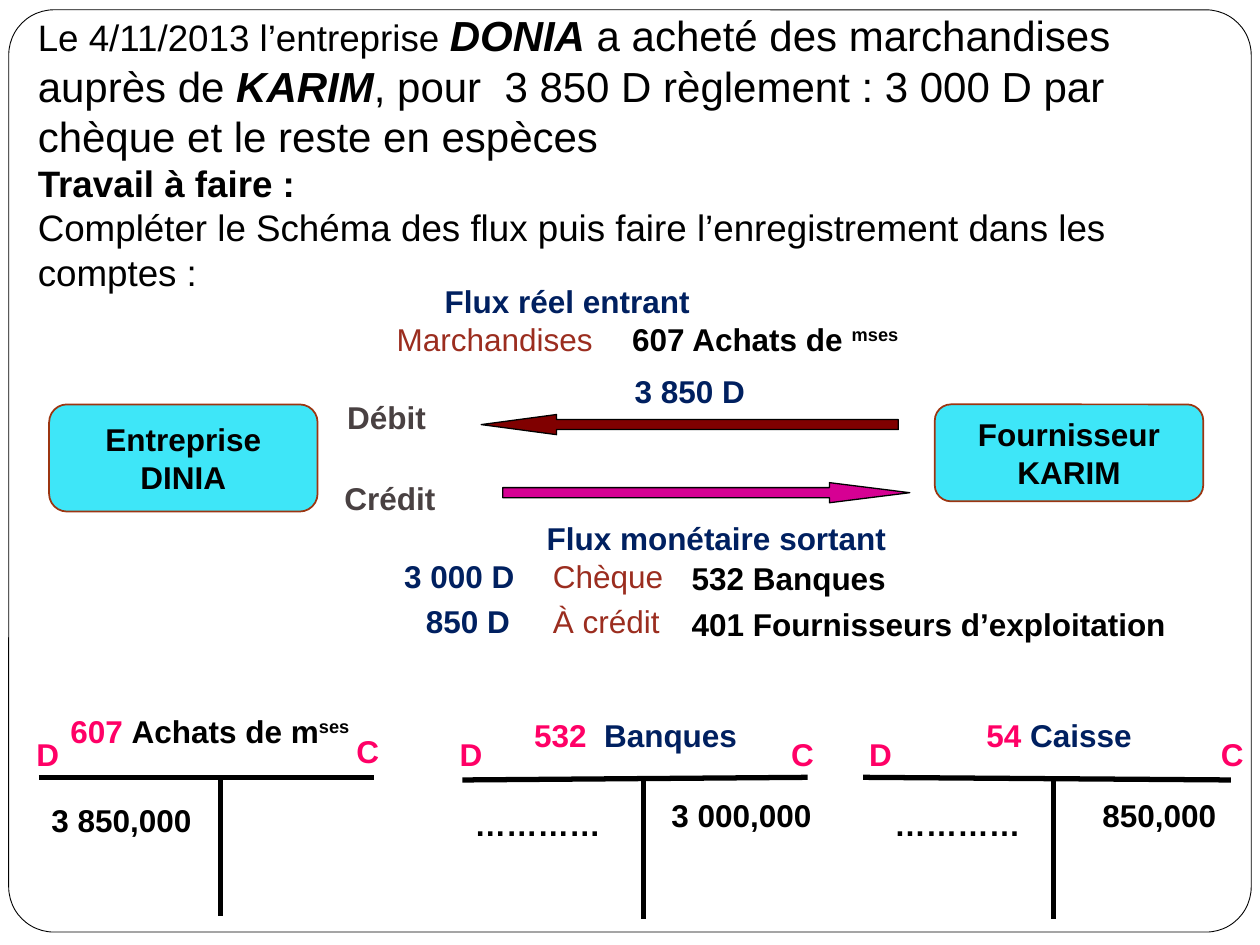
from lxml.etree import SubElement
from pptx import Presentation
from pptx.dml.color import RGBColor
from pptx.enum.shapes import MSO_CONNECTOR, MSO_SHAPE
from pptx.enum.text import MSO_ANCHOR, PP_ALIGN
from pptx.oxml.ns import qn
from pptx.util import Pt

BLACK = RGBColor(0x00, 0x00, 0x00)
WHITE = RGBColor(0xFF, 0xFF, 0xFF)
NAVY = RGBColor(0x00, 0x20, 0x60)
RUST = RGBColor(0x9B, 0x2D, 0x1F)
GREY = RGBColor(0x49, 0x41, 0x42)
PINK = RGBColor(0xFF, 0x00, 0x66)
CYAN = RGBColor(0x3E, 0xE6, 0xF8)
BROWN = RGBColor(0x9C, 0x35, 0x11)
MAGENTA = RGBColor(0xD6, 0x00, 0x93)
MAROON = RGBColor(0x80, 0x00, 0x00)


def add_run(paragraph, text, size=18, color=BLACK, bold=True, italic=False, superscript=False):
    run = paragraph.add_run()
    run.text = text
    font = run.font
    font.name = "Arial"
    font.size = Pt(size)
    font.bold = bold
    font.italic = italic
    font.color.rgb = color
    if superscript:
        run._r.get_or_add_rPr().set("baseline", "30000")


class SlideBuilder:
    row_height = 28.8
    account_line = 3

    def __init__(self, slide):
        self.slide = slide

    def shape(self, kind, left, top, width, height, fill, line, line_width, adjustments=()):
        shape = self.slide.shapes.add_shape(kind, Pt(left), Pt(top), Pt(width), Pt(height))
        shape.shadow.inherit = False
        shape.fill.solid()
        shape.fill.fore_color.rgb = fill
        shape.line.color.rgb = line
        shape.line.width = Pt(line_width)
        for index, value in enumerate(adjustments):
            shape.adjustments[index] = value
        return shape

    def party(self, text, left, top, width, height):
        shape = self.shape(MSO_SHAPE.ROUNDED_RECTANGLE, left, top, width, height, CYAN, BROWN, 1)
        frame = shape.text_frame
        frame.word_wrap = True
        frame.vertical_anchor = MSO_ANCHOR.MIDDLE
        paragraph = frame.paragraphs[0]
        paragraph.alignment = PP_ALIGN.CENTER
        add_run(paragraph, text)

    def text(self, paragraphs, left, top, width, height=row_height,
             align=PP_ALIGN.LEFT, anchor=MSO_ANCHOR.TOP, inset=7.2):
        box = self.slide.shapes.add_textbox(Pt(left), Pt(top), Pt(width), Pt(height))
        frame = box.text_frame
        frame.word_wrap = True
        frame.vertical_anchor = anchor
        frame.margin_left = Pt(inset)
        for index, runs in enumerate(paragraphs):
            paragraph = frame.add_paragraph() if index else frame.paragraphs[0]
            paragraph.alignment = align
            for text, style in runs:
                add_run(paragraph, text, **style)

    def label(self, text, left, top, width, align=PP_ALIGN.LEFT, **style):
        self.text([[(text, style)]], left, top, width, align=align)

    def line(self, start, end):
        connector = self.slide.shapes.add_connector(
            MSO_CONNECTOR.STRAIGHT, *(Pt(value) for value in (*start, *end)))
        connector.line.color.rgb = BLACK
        connector.line.width = Pt(self.account_line)
        SubElement(connector._element.spPr, qn("a:effectLst"))

    def account(self, title, title_at, bar, stem, debit_mark, credit_mark, amounts):
        self.line(*bar)
        self.line(*stem)
        self.text([title], *title_at)
        self.label("D", *debit_mark, 31.7, color=PINK)
        self.label("C", *credit_mark, 27.4, color=PINK)
        for amount, left, top in amounts:
            self.label(amount, left, top, 105)


def main():
    presentation = Presentation()
    presentation.slide_width = Pt(720)
    presentation.slide_height = Pt(540)
    builder = SlideBuilder(presentation.slides.add_slide(presentation.slide_layouts[6]))

    builder.shape(MSO_SHAPE.ROUNDED_RECTANGLE, 5, 5.6, 710, 527, WHITE, BLACK, 0.5, [0.049])

    plain = {"size": 24, "bold": False}
    name = {"size": 24, "italic": True}
    builder.text([
        [("Le 4/11/2013 l’entreprise ", {"size": 21, "bold": False}),
         ("DONIA", name),
         (" a acheté des marchandises auprès de ", plain),
         ("KARIM", name),
         (", pour  3 850 D règlement : 3 000 D par chèque et le reste en espèces", plain)],
        [("Travail à faire :", {"size": 21})],
        [("Compléter le Schéma des flux puis faire l’enregistrement dans les comptes :",
          {"size": 21, "bold": False})],
    ], 0, 1.4, 720, 170.6, anchor=MSO_ANCHOR.MIDDLE, inset=21.6)

    builder.party("Entreprise DINIA", 28.1, 231.1, 153.4, 61.2)
    builder.party("Fournisseur KARIM", 534.2, 231.1, 153.4, 55.4)
    builder.shape(MSO_SHAPE.RIGHT_ARROW, 287.3, 275.8, 232.6, 11.5,
                  MAGENTA, BLACK, 0.75, [0.5, 3.99])
    builder.shape(MSO_SHAPE.LEFT_ARROW, 275, 236.9, 238.3, 11.5,
                  MAROON, BLACK, 0.75, [0.5, 3.74])

    for text, left, top, width, color, bold in [
        ("Flux réel entrant", 247, 157.7, 180.7, NAVY, True),
        ("Marchandises", 219.6, 179.3, 136, RUST, False),
        ("Flux monétaire sortant", 305.3, 293, 219.6, NAVY, True),
        ("3 000 D", 223.9, 314.6, 90.7, NAVY, True),
        ("Chèque", 308.9, 314.6, 90, RUST, False),
        ("532 Banques", 388.1, 316.1, 130.3, BLACK, True),
        ("850 D", 236.2, 340.6, 68.4, NAVY, True),
        ("À crédit", 308.9, 340.6, 90, RUST, False),
        ("401 Fournisseurs d’exploitation", 388.1, 342, 303.8, BLACK, True),
    ]:
        builder.label(text, left, top, width, color=color, bold=bold)

    for text, left, top, width, color in [
        ("3 850 D", 346, 208.8, 96.5, NAVY),
        ("Débit", 173, 223.9, 95.8, GREY),
        ("Crédit", 168.5, 270, 108.7, GREY),
    ]:
        builder.label(text, left, top, width, align=PP_ALIGN.CENTER, color=color)

    builder.text([[("607 Achats de ", {}), ("mses", {"superscript": True})]], 354.2, 179.3, 244)

    builder.account(
        [("607 ", {"color": PINK}), ("Achats de m", {}), ("ses", {"superscript": True})],
        (33.1, 403.2, 226.8),
        ((22.3, 444.2), (213.8, 444.2)), ((126, 443.5), (126, 523.4)),
        (13.7, 416.2), (196.6, 414.7),
        [("3 850,000", 22.3, 454.3)])
    builder.account(
        [("532 ", {"color": PINK}), (" Banques", {"color": NAVY})],
        (298.1, 405.4, 139),
        ((264.2, 445.7), (461.5, 444.2)), ((367.9, 445.7), (367.9, 524.9)),
        (255.6, 416.2), (445, 416.2),
        [("…………", 264.2, 456.5), ("3 000,000", 376.6, 451.4)])
    builder.account(
        [("54 ", {"color": PINK}), ("Caisse", {"color": NAVY})],
        (556.6, 405.4, 98.6),
        ((493.2, 444.2), (703.4, 445.7)), ((601.9, 445.7), (601.9, 524.9)),
        (489.6, 416.2), (690.5, 416.2),
        [("…………", 504, 456.5), ("850,000", 622.8, 451.4)])

    presentation.save("out.pptx")


if __name__ == "__main__":
    main()
